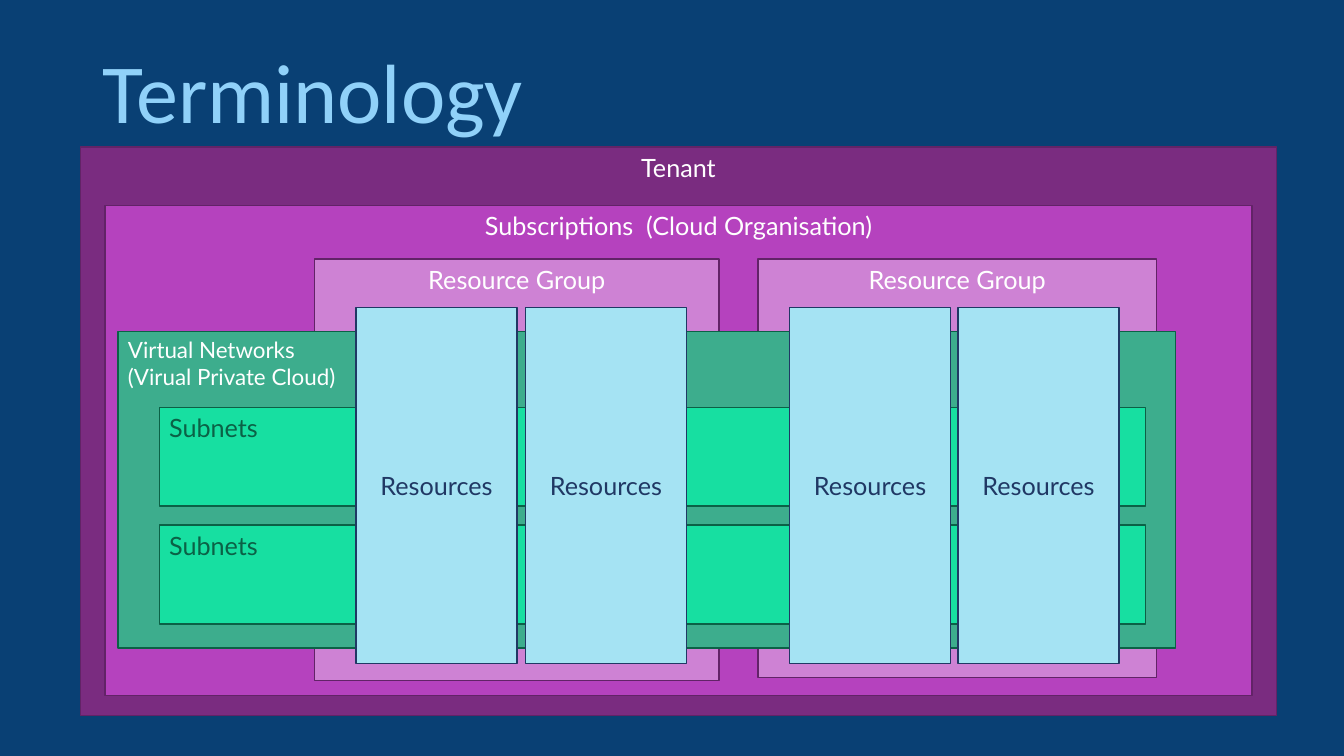
from dataclasses import dataclass

from pptx import Presentation
from pptx.dml.color import RGBColor
from pptx.enum import shapes, text
from pptx.util import Inches, Pt

NAVY = RGBColor(0x09, 0x40, 0x74)
SKY = RGBColor(0x90, 0xD1, 0xF9)
WHITE = RGBColor(0xFF, 0xFF, 0xFF)
PLUM = RGBColor(0x7A, 0x2C, 0x80)
ORCHID = RGBColor(0xB5, 0x42, 0xBE)
LILAC = RGBColor(0xCE, 0x82, 0xD4)
GRAPE = RGBColor(0x62, 0x23, 0x67)
TEAL = RGBColor(0x3D, 0xAD, 0x8D)
MINT = RGBColor(0x17, 0xDF, 0xA1)
FOREST = RGBColor(0x0B, 0x61, 0x46)
ICE = RGBColor(0xA5, 0xE3, 0xF3)
INK = RGBColor(0x20, 0x38, 0x64)

WIDE, HIGH = Inches(13.33), Inches(7.5)
LEFT, CENTER = text.PP_ALIGN.LEFT, text.PP_ALIGN.CENTER
TOP, MIDDLE, BOTTOM = (text.MSO_ANCHOR.TOP, text.MSO_ANCHOR.MIDDLE,
                       text.MSO_ANCHOR.BOTTOM)


@dataclass(frozen=True)
class Area:
    x: float
    y: float
    w: float
    h: float

    def scale(self) -> tuple[int, int, int, int]:
        return (round(self.x * WIDE / 100), round(self.y * HIGH / 100),
                round(self.w * WIDE / 100), round(self.h * HIGH / 100))


@dataclass(frozen=True)
class Style:
    fill: RGBColor
    edge: RGBColor
    ink: RGBColor
    align: text.PP_ALIGN = CENTER
    anchor: text.MSO_ANCHOR = TOP
    size: int = 18


@dataclass(frozen=True)
class Box:
    label: str
    area: Area
    style: Style


GROUP = Style(LILAC, GRAPE, WHITE)
SUBNET = Style(MINT, FOREST, FOREST, LEFT)
RESOURCE = Style(ICE, INK, INK, anchor=MIDDLE)

BOXES = [
    Box("Tenant", Area(6, 19.47, 88.97, 75.2), Style(PLUM, GRAPE, WHITE)),
    Box("Subscriptions  (Cloud Organisation)", Area(7.8, 27.2, 85.37, 64.8),
        Style(ORCHID, GRAPE, WHITE)),
    Box("Resource Group", Area(23.41, 34.27, 30.08, 55.73), GROUP),
    Box("Resource Group", Area(56.41, 34.27, 29.63, 55.33), GROUP),
    Box("Virtual Networks\n(Virual Private Cloud)",
        Area(8.78, 43.87, 78.69, 41.87),
        Style(TEAL, FOREST, WHITE, LEFT, size=16)),
    *(Box("Subnets", Area(11.85, y, 73.37, 13.07), SUBNET)
      for y in (53.87, 69.47)),
    *(Box("Resources", Area(x, 40.67, 12, 47.07), RESOURCE)
      for x in (26.48, 39.08, 58.74, 71.27)),
]


def write(frame, label: str, face: str, size: int, ink: RGBColor,
          align: text.PP_ALIGN, anchor: text.MSO_ANCHOR) -> None:
    frame.word_wrap = True
    frame.auto_size = text.MSO_AUTO_SIZE.NONE
    frame.vertical_anchor = anchor
    line = frame.paragraphs[0]
    line.text = label
    line.alignment = align
    for run in line.runs:
        run.font.name = face
        run.font.size = Pt(size)
        run.font.color.rgb = ink


def draw(slide, box: Box) -> None:
    look = box.style
    rect = slide.shapes.add_shape(shapes.MSO_SHAPE.RECTANGLE,
                                  *box.area.scale())
    rect.shadow.inherit = False
    rect.fill.solid()
    rect.fill.fore_color.rgb = look.fill
    rect.line.color.rgb = look.edge
    rect.line.width = Pt(1)
    write(rect.text_frame, box.label, "Lato", look.size, look.ink,
          look.align, look.anchor)


def head(slide, label: str, area: Area) -> None:
    title = slide.shapes.title
    title.left, title.top, title.width, title.height = area.scale()
    write(title.text_frame, label, "Calibri", 60, SKY, LEFT, BOTTOM)
    title.text_frame.paragraphs[0].line_spacing = 0.9


def main() -> None:
    deck = Presentation()
    deck.slide_width, deck.slide_height = WIDE, HIGH
    slide = deck.slides.add_slide(deck.slide_layouts[5])
    slide.background.fill.solid()
    slide.background.fill.fore_color.rgb = NAVY
    head(slide, "Terminology", Area(6.9, 5.33, 86.27, 14.13))
    for box in BOXES:
        draw(slide, box)
    deck.save("out.pptx")


if __name__ == "__main__":
    main()
